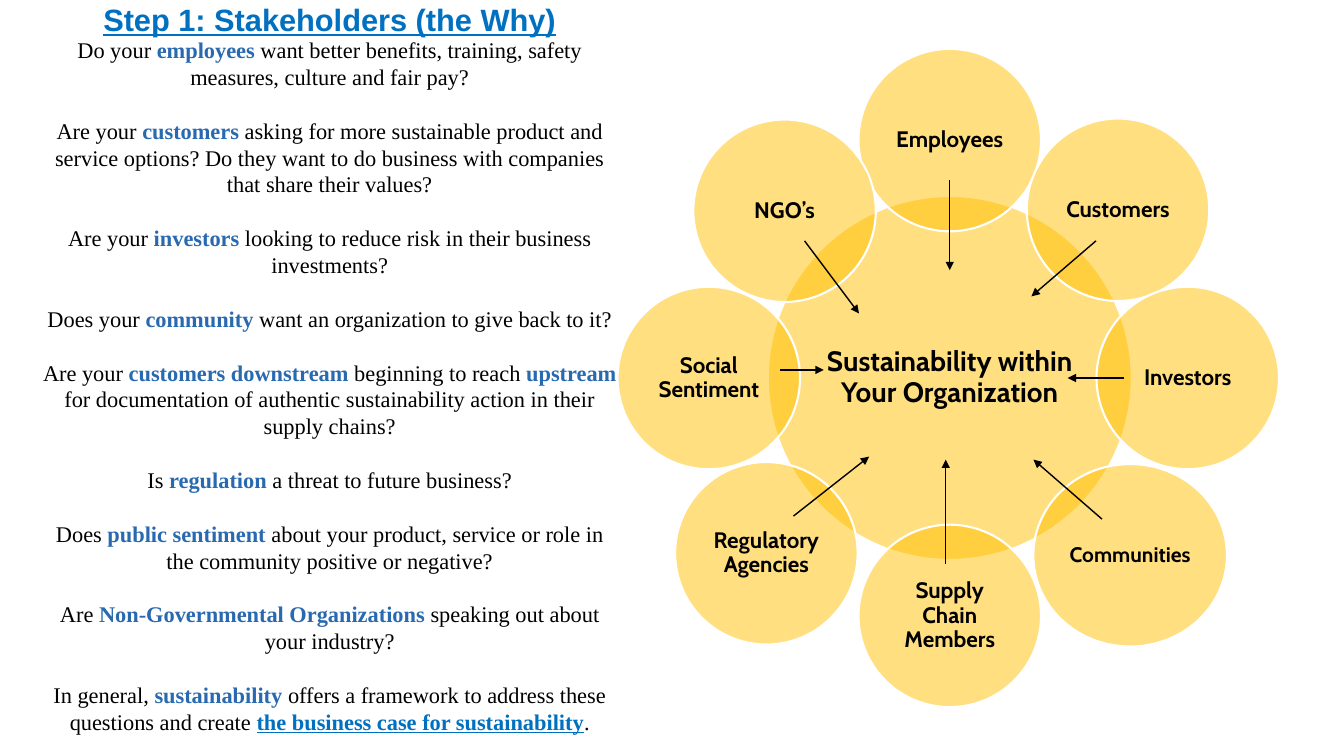
import math
import pptx
import pptx.util
import pptx.dml.color
import pptx.enum.shapes
import pptx.enum.text
import pptx.oxml
import pptx.oxml.ns
from pptx.util import Inches, Pt

COLORS = {"gold": "FFC000", "white": "FFFFFF", "black": "000000",
          "heading": "0070C0", "keyword": "2969B0"}
CENTER = pptx.enum.text.PP_ALIGN.CENTER
TOP = pptx.enum.text.MSO_ANCHOR.TOP


def style_font(font, name, size, color, bold=False, underline=False):
    font.name = name
    font.size = Pt(size)
    font.bold = bold
    font.underline = underline
    font.color.rgb = pptx.dml.color.RGBColor.from_string(COLORS[color])


def add_circle(slide, label, center_x, center_y, width, height, size, inset):
    circle = slide.shapes.add_shape(
        pptx.enum.shapes.MSO_SHAPE.OVAL,
        Inches(center_x - width / 2), Inches(center_y - height / 2),
        Inches(width), Inches(height))
    circle.shadow.inherit = False
    circle.fill.solid()
    circle.fill.fore_color.rgb = pptx.dml.color.RGBColor.from_string(COLORS["gold"])
    gold = circle.fill._xPr.find(".//" + pptx.oxml.ns.qn("a:srgbClr"))
    gold.append(pptx.oxml.parse_xml(
        f'<a:alpha {pptx.oxml.ns.nsdecls("a")} val="50000"/>'))
    circle.line.color.rgb = pptx.dml.color.RGBColor.from_string(COLORS["white"])
    circle.line.width = Pt(1.5)
    frame = circle.text_frame
    frame.word_wrap = True
    frame.vertical_anchor = pptx.enum.text.MSO_ANCHOR.MIDDLE
    frame.margin_left = frame.margin_right = Inches(inset)
    frame.margin_top = frame.margin_bottom = Inches(inset)
    frame.text = label
    frame.paragraphs[0].alignment = CENTER
    frame.paragraphs[0].line_spacing = 0.9
    style_font(frame.paragraphs[0].runs[0].font, "Cabin", size, "black", bold=True)


deck = pptx.Presentation()
deck.slide_width = Inches(13.33)
deck.slide_height = Inches(7.5)
slide = deck.slides.add_slide(deck.slide_layouts[1])

heading = slide.shapes.title
questions = slide.placeholders[1]
for block, top, height in [(heading, -0.04, 0.45), (questions, 0.31, 7.12)]:
    block.left, block.top = Inches(0.32), Inches(top)
    block.width, block.height = Inches(5.9), Inches(height)
    block.text_frame.word_wrap = True
    block.text_frame.auto_size = pptx.enum.text.MSO_AUTO_SIZE.NONE
    block.text_frame.vertical_anchor = TOP

heading.text_frame.text = "Step 1: Stakeholders (the Why)"
heading.text_frame.paragraphs[0].alignment = CENTER
style_font(heading.text_frame.paragraphs[0].runs[0].font, "Arial", 22, "heading",
           bold=True, underline=True)

BUSINESS_CASE = "the business case for sustainability"
QUESTIONS = [
    "Do your *employees* want better benefits, training, safety measures, culture and fair pay?",
    "Are your *customers* asking for more sustainable product and service options? "
    "Do they want to do business with companies that share their values?",
    "Are your *investors* looking to reduce risk in their business investments?",
    "Does your *community* want an organization to give back to it?",
    "Are your *customers downstream* beginning to reach *upstream* for documentation "
    "of authentic sustainability action in their supply chains?",
    "Is *regulation* a threat to future business?",
    "Does *public sentiment* about your product, service or role in the community "
    "positive or negative?",
    "Are *Non-Governmental Organizations* speaking out about your industry?",
    "In general, *sustainability* offers a framework to address these questions "
    f"and create *{BUSINESS_CASE}*.",
]
LINE_PITCH = 19.2
for index, question in enumerate(QUESTIONS):
    frame = questions.text_frame
    paragraph = frame.add_paragraph() if index else frame.paragraphs[0]
    properties = paragraph._p.get_or_add_pPr()
    properties.set("marL", "0")
    properties.set("indent", "0")
    properties.append(pptx.oxml.parse_xml(
        f'<a:buNone {pptx.oxml.ns.nsdecls("a")}/>'))
    paragraph.alignment = CENTER
    paragraph.line_spacing = Pt(LINE_PITCH)
    paragraph.space_before = Pt(LINE_PITCH if index else 0)
    for part, wording in enumerate(question.split("*")):
        run = paragraph.add_run()
        run.text = wording
        is_keyword = part % 2 == 1
        is_case = wording == BUSINESS_CASE
        color = "heading" if is_case else "keyword" if is_keyword else "black"
        style_font(run.font, "Times New Roman", 16, color, is_keyword, is_case)

HUB_X, HUB_Y, RING_RADIUS, CIRCLE = 9.42, 3.75, 2.36, 1.81
add_circle(slide, "Sustainability within Your Organization",
           HUB_X, HUB_Y, 3.61, 3.61, 20, 0.03)

STAKEHOLDERS = [
    ("Employees", 0, 0, CIRCLE, 16),
    ("Customers", 0, 0, CIRCLE, 16),
    ("Investors", 0, 0, CIRCLE, 16),
    ("Communities", 0.12, 0.09, 1.92, 15),
    ("Supply Chain Members", 0, 0, CIRCLE, 16),
    ("Regulatory Agencies", -0.15, 0.07, CIRCLE, 16),
    ("Social Sentiment", -0.03, 0, CIRCLE, 16),
    ("NGO’s", 0.03, 0.01, CIRCLE, 16),
]
for position, (label, shift_x, shift_y, width, size) in enumerate(STAKEHOLDERS):
    angle = math.tau * position / len(STAKEHOLDERS)
    add_circle(slide, label,
               HUB_X + RING_RADIUS * math.sin(angle) + shift_x,
               HUB_Y - RING_RADIUS * math.cos(angle) + shift_y,
               width, CIRCLE, size, 0.02)

INFLUENCES = [
    (7.98, 2.39, 8.52, 3.11),
    (9.42, 1.79, 9.42, 2.68),
    (10.87, 2.39, 10.23, 2.94),
    (11.15, 3.75, 10.59, 3.75),
    (10.93, 5.15, 10.25, 4.56),
    (9.38, 5.6, 9.38, 4.56),
    (7.87, 5.12, 8.62, 4.53),
    (7.74, 3.67, 8.17, 3.67),
]
for ends in INFLUENCES:
    influence = slide.shapes.add_connector(
        pptx.enum.shapes.MSO_CONNECTOR.STRAIGHT, *map(Inches, ends))
    influence.line.color.rgb = pptx.dml.color.RGBColor.from_string(COLORS["black"])
    influence.line.width = Pt(1)
    influence.line._get_or_add_ln().append(pptx.oxml.parse_xml(
        f'<a:tailEnd {pptx.oxml.ns.nsdecls("a")} type="triangle"/>'))
    influence._element.spPr.append(pptx.oxml.parse_xml(
        f'<a:effectLst {pptx.oxml.ns.nsdecls("a")}/>'))

deck.save("out.pptx")
